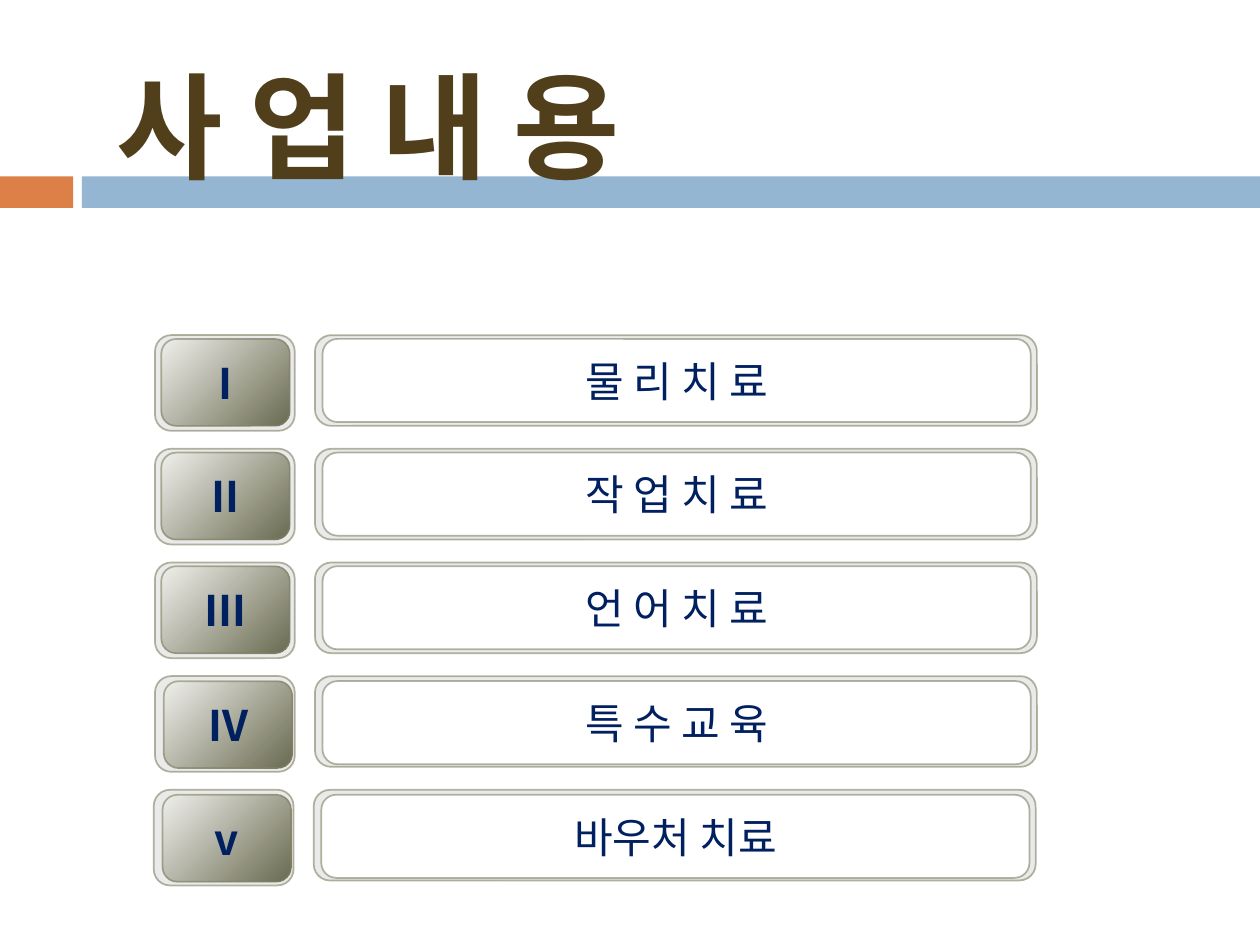
from dataclasses import dataclass

from lxml import etree
from pptx import Presentation
from pptx import util as u
from pptx.dml.color import RGBColor
from pptx.enum import shapes, text
from pptx.oxml.ns import qn


@dataclass(frozen=True)
class Theme:
    accent: str = "DD8047"
    band: str = "94B6D2"
    title: str = "513E1B"
    label: str = "002060"
    frame: str = "EAEAEA"
    panel: str = "FFFFFF"
    outline: str = "808162"
    badge: tuple[str, str] = ("F0F0EC", "6A6B51")
    title_font: str = "Calibri"
    label_font: str = "Noto Sans CJK KR"
    title_size: int = 66
    label_size: int = 24
    outline_width: int = 1
    outline_opacity: int = 60


@dataclass(frozen=True)
class Box:
    column: float
    row: float
    columns: float
    rows: float


@dataclass(frozen=True)
class Item:
    numeral: str
    label: str
    shift: float = 0
    drop: float = 0.3
    badge_inset: float = 0.5


THEME = Theme()
WIDTH, HEIGHT = u.Inches(10), u.Inches(7.5)
GRID_COLUMNS, GRID_ROWS = 100, 75
FIRST_ROW, ROW_PITCH = 26.6, 9.02
BADGE_COLUMN, PANEL_COLUMN = 12.3, 25

ITEMS = (
    Item("Ⅰ", "물 리 치 료"),
    Item("Ⅱ", "작 업 치 료"),
    Item("Ⅲ", "언 어 치 료"),
    Item("Ⅳ", "특 수 교 육", drop=0.4, badge_inset=0.7),
    Item("v", "바우처 치료", shift=-0.1, drop=0.4, badge_inset=0.7),
)


def place(box: Box) -> tuple[int, int, int, int]:
    across, down = WIDTH / GRID_COLUMNS, HEIGHT / GRID_ROWS
    return (round(box.column * across), round(box.row * down),
            round(box.columns * across), round(box.rows * down))


def write(shape, content: str, *, size: int, font: str, color: str,
          bold: bool = False, wrap: bool = False,
          align=text.PP_ALIGN.CENTER) -> None:
    frame = shape.text_frame
    frame.word_wrap = wrap
    frame.vertical_anchor = text.MSO_ANCHOR.MIDDLE
    paragraph = frame.paragraphs[0]
    paragraph.alignment = align
    run = paragraph.add_run()
    run.text = content
    run.font.size = u.Pt(size)
    run.font.bold = bold
    run.font.color.rgb = RGBColor.from_string(color)
    run.font.name = font
    east_asian = etree.Element(qn("a:ea"), typeface=font)
    run.font._element.find(qn("a:latin")).addnext(east_asian)


def draw_bar(slide, box: Box, color: str) -> None:
    shape = slide.shapes.add_shape(shapes.MSO_SHAPE.RECTANGLE, *place(box))
    shape.shadow.inherit = False
    shape.fill.solid()
    shape.fill.fore_color.rgb = RGBColor.from_string(color)
    shape.line.fill.background()


def draw_rounded(slide, box: Box, fill: str | tuple[str, str], corner: float):
    shape = slide.shapes.add_shape(
        shapes.MSO_SHAPE.ROUNDED_RECTANGLE, *place(box))
    shape.shadow.inherit = False
    shape.adjustments[0] = corner
    if isinstance(fill, tuple):
        shape.fill.gradient()
        shape.fill.gradient_angle = 315
        for stop, color in zip(shape.fill.gradient_stops, fill):
            stop.color.rgb = RGBColor.from_string(color)
    else:
        shape.fill.solid()
        shape.fill.fore_color.rgb = RGBColor.from_string(fill)
    shape.line.width = u.Pt(THEME.outline_width)
    shape.line.color.rgb = RGBColor.from_string(THEME.outline)
    outline = shape.line._ln.find(".//" + qn("a:srgbClr"))
    etree.SubElement(outline, qn("a:alpha"),
                     val=str(THEME.outline_opacity * 1000))
    return shape


def draw_item(slide, item: Item, index: int) -> None:
    top = FIRST_ROW + index * ROW_PITCH
    panel_left = PANEL_COLUMN + item.shift
    badge_left = BADGE_COLUMN + item.shift
    style = dict(size=THEME.label_size, font=THEME.label_font,
                 color=THEME.label)

    draw_rounded(slide, Box(panel_left, top, 57.3, 7.2), THEME.frame, 0.18)
    panel = draw_rounded(
        slide, Box(panel_left + 0.6, top + item.drop, 56.2, 6.6),
        THEME.panel, 0.18)
    write(panel, item.label, **style)

    draw_rounded(slide, Box(badge_left, top, 11.1, 7.6), THEME.frame, 0.17)
    badge = draw_rounded(
        slide, Box(badge_left + item.badge_inset, top + item.drop, 10.2, 6.9),
        THEME.badge, 0.17)
    write(badge, item.numeral, bold=True, **style)


def main() -> None:
    presentation = Presentation()
    presentation.slide_width, presentation.slide_height = WIDTH, HEIGHT
    slide = presentation.slides.add_slide(presentation.slide_layouts[6])

    draw_bar(slide, Box(0, 14, 5.8, 2.5), THEME.accent)
    draw_bar(slide, Box(6.5, 14, 93.5, 2.5), THEME.band)
    title = slide.shapes.add_textbox(*place(Box(8.3, 3.6, 83.7, 12.5)))
    write(title, "사 업 내 용", size=THEME.title_size, font=THEME.title_font,
          color=THEME.title, bold=True, wrap=True, align=text.PP_ALIGN.LEFT)
    for index, item in enumerate(ITEMS):
        draw_item(slide, item, index)

    presentation.save("out.pptx")


if __name__ == "__main__":
    main()
